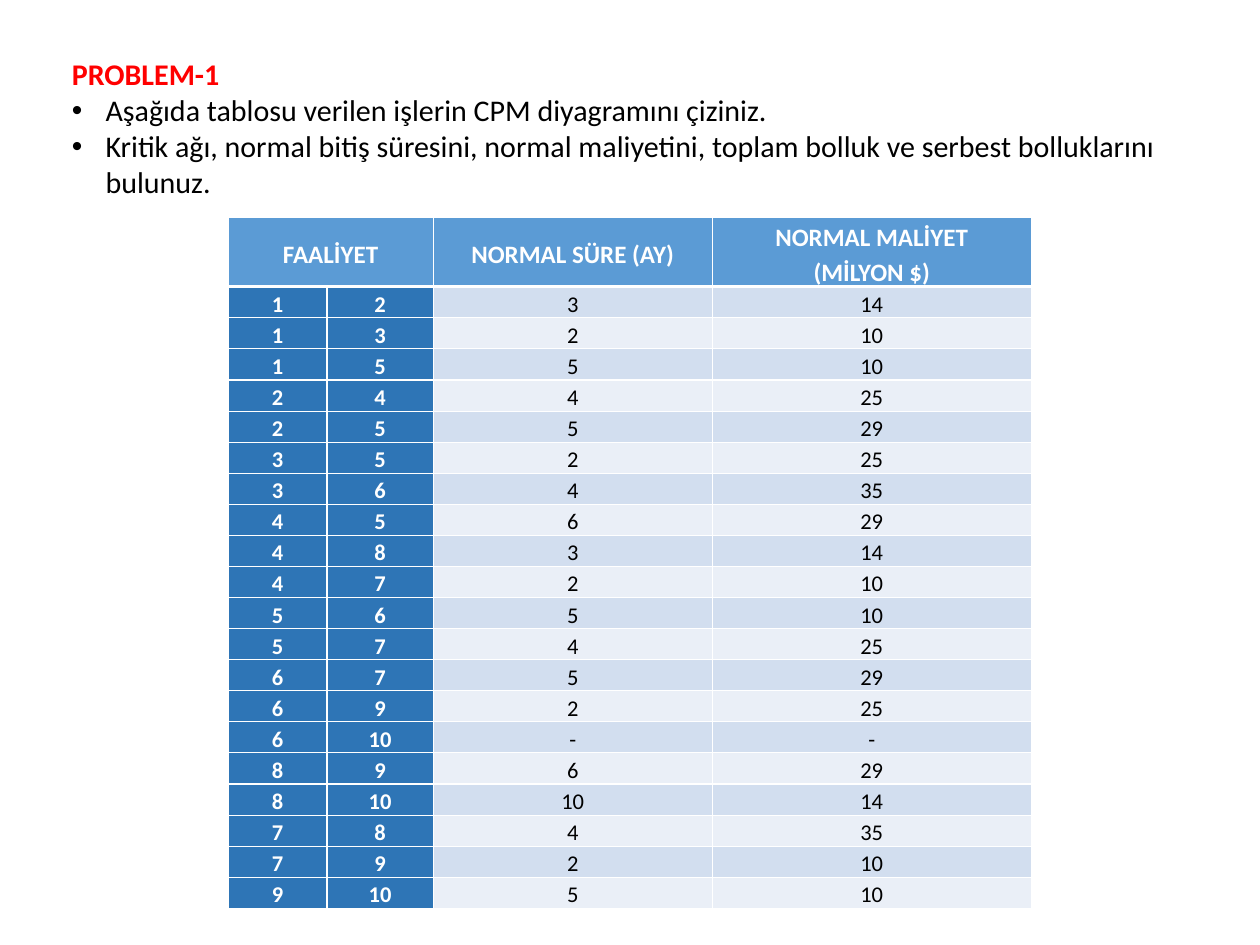
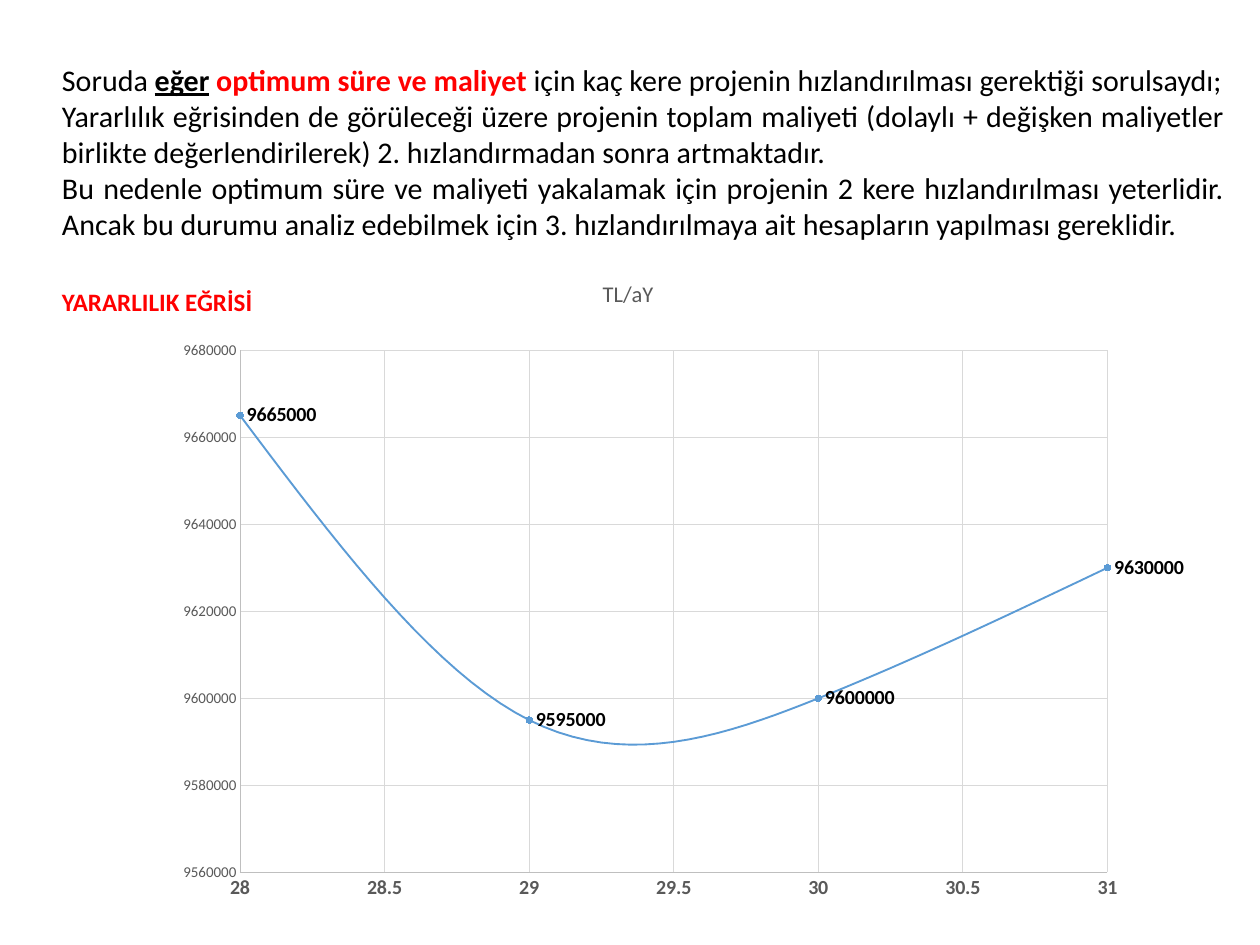
from pptx import Presentation
from pptx import util as u
from pptx.chart import data
from pptx.dml.color import RGBColor
from pptx.enum import chart as ch
from pptx.enum import text
from pptx.oxml import parse_xml
from pptx.oxml.ns import nsdecls, qn

Pt = u.Pt

WHITE = RGBColor(0xFF, 0xFF, 0xFF)
BLACK = RGBColor(0x00, 0x00, 0x00)
RED = RGBColor(0xFF, 0x00, 0x00)
BLUE = RGBColor(0x5B, 0x9B, 0xD5)
DARK_BLUE = RGBColor(0x2E, 0x75, 0xB6)
BAND = RGBColor(0xD2, 0xDE, 0xEF)
LIGHT_BAND = RGBColor(0xEA, 0xEF, 0xF7)
GREY = RGBColor(0x59, 0x59, 0x59)
AXIS_GREY = RGBColor(0xBF, 0xBF, 0xBF)
GRID_GREY = RGBColor(0xD9, 0xD9, 0xD9)

# from event, to event, duration (months), cost (millions)
ACTIVITIES = [
    (1, 2, 3, 14), (1, 3, 2, 10), (1, 5, 5, 10), (2, 4, 4, 25),
    (2, 5, 5, 29), (3, 5, 2, 25), (3, 6, 4, 35), (4, 5, 6, 29),
    (4, 8, 3, 14), (4, 7, 2, 10), (5, 6, 5, 10), (5, 7, 4, 25),
    (6, 7, 5, 29), (6, 9, 2, 25), (6, 10, "-", "-"), (8, 9, 6, 29),
    (8, 10, 10, 14), (7, 8, 4, 35), (7, 9, 2, 10), (9, 10, 5, 10),
]
HEADINGS = ["FAALİYET", "", "NORMAL SÜRE (AY)", "NORMAL MALİYET\v(MİLYON $)"]
COSTS = [(31, 9630000), (30, 9600000), (29, 9595000), (28, 9665000)]


class Deck:
    FONT = "Calibri"

    def __init__(self, width, height):
        self.prs = Presentation()
        self.prs.slide_width, self.prs.slide_height = Pt(width), Pt(height)
        self.s = None

    def new_slide(self):
        self.s = self.prs.slides.add_slide(self.prs.slide_layouts[6])

    def style(self, font, size, color=BLACK, bold=False, underline=None):
        font.name, font.size, font.bold = self.FONT, Pt(size), bold
        font.color.rgb = color
        if underline:
            font.underline = True

    def bullet(self, p):
        pPr = p._p.get_or_add_pPr()
        pPr.set("marL", str(Pt(27)))
        pPr.set("indent", str(-Pt(27)))
        pPr.append(parse_xml(f'<a:buFont {nsdecls("a")} typeface="Arial"/>'))
        pPr.append(parse_xml(f'<a:buChar {nsdecls("a")} char="•"/>'))

    def text_box(self, box, paragraphs, size=24, bullets=(), middle=False, wrap=True):
        """Each paragraph is a list of runs: (text, color, bold, underline)."""
        tf = self.s.shapes.add_textbox(*map(Pt, box)).text_frame
        tf.word_wrap = wrap
        tf.auto_size = text.MSO_AUTO_SIZE.SHAPE_TO_FIT_TEXT
        if middle:
            tf.vertical_anchor = text.MSO_ANCHOR.MIDDLE
        for i, runs in enumerate(paragraphs):
            p = tf.add_paragraph() if i else tf.paragraphs[0]
            if i in bullets:
                self.bullet(p)
            else:
                p.alignment = text.PP_ALIGN.JUSTIFY
            for words, *look in runs:
                r = p.add_run()
                r.text = words
                self.style(r.font, size, *look)

    def cell(self, cell, words, size, color, fill, bold, anchor, bottom=1):
        tcPr = cell._tc.get_or_add_tcPr()
        for side, width in zip("LRTB", (1, 1, 1, bottom)):
            tcPr.append(parse_xml(
                f'<a:ln{side} {nsdecls("a")} w="{Pt(width)}"><a:solidFill>'
                f'<a:srgbClr val="{WHITE}"/></a:solidFill></a:ln{side}>'))
        cell.fill.solid()
        cell.fill.fore_color.rgb = fill
        cell.margin_left = cell.margin_right = Pt(3.6)
        cell.margin_top = cell.margin_bottom = 0
        cell.vertical_anchor = anchor
        cell.text = words
        p = cell.text_frame.paragraphs[0]
        p.alignment = text.PP_ALIGN.CENTER
        p.line_spacing = 1.15
        for r in p.runs:
            self.style(r.font, size, color, bold)

    def activity_table(self, box, widths, header_height, row_height):
        table = self.s.shapes.add_table(
            len(ACTIVITIES) + 1, len(widths), *map(Pt, box)).table
        for column, width in zip(table.columns, widths):
            column.width = Pt(width)
        for i, row in enumerate(table.rows):
            row.height = Pt(row_height if i else header_height)
        for c, heading in enumerate(HEADINGS):
            self.cell(table.cell(0, c), heading, 20, WHITE, BLUE, True,
                      text.MSO_ANCHOR.MIDDLE, bottom=3)
        table.cell(0, 0).merge(table.cell(0, 1))
        for i, values in enumerate(ACTIVITIES, 1):
            band = BAND if i % 2 else LIGHT_BAND
            for c, value in enumerate(values):
                event = c < 2
                self.cell(table.cell(i, c), str(value), 18,
                          WHITE if event else BLACK,
                          DARK_BLUE if event else band,
                          event, text.MSO_ANCHOR.BOTTOM)

    def line(self, line, color, width):
        line.color.rgb = color
        line.width = Pt(width)

    def axis(self, axis, low, high, step, size, bold=False):
        axis.minimum_scale, axis.maximum_scale, axis.major_unit = low, high, step
        axis.major_tick_mark = axis.minor_tick_mark = ch.XL_TICK_MARK.NONE
        axis.has_major_gridlines = True
        self.line(axis.major_gridlines.format.line, GRID_GREY, 0.75)
        self.line(axis.format.line, AXIS_GREY, 0.75)
        self.style(axis.tick_labels.font, size, GREY, bold)
        axis.tick_labels.number_format = "General"
        axis.tick_labels.number_format_is_linked = False

    def place(self, element, index, target="", **fractions):
        """Fix a chart part at fractions of the chart's size."""
        for old in element.findall(qn("c:layout")):
            element.remove(old)
        modes = "".join(f'<c:{k}Mode val="edge"/>' for k in "xy")
        sizes = "".join(f'<c:{k} val="{v}"/>' for k, v in fractions.items())
        element.insert(index, parse_xml(
            f'<c:layout {nsdecls("c")}><c:manualLayout>{target}{modes}{sizes}'
            '</c:manualLayout></c:layout>'))

    def cost_curve(self, box, title):
        cd = data.XyChartData()
        points = cd.add_series("Series 1")
        for month, cost in COSTS:
            points.add_data_point(month, cost)
        chart = self.s.shapes.add_chart(
            ch.XL_CHART_TYPE.XY_SCATTER_SMOOTH, *map(Pt, box), cd).chart
        self.style(chart.font, 10)
        chart.has_legend = False
        chart.has_title = True
        tf = chart.chart_title.text_frame
        tf.text = title
        self.style(tf.paragraphs[0].runs[0].font, 18, GREY)
        self.place(chart.chart_title._element, 1, x=0.46, y=0.04)
        self.place(chart._chartSpace.chart.plotArea, 0,
                   '<c:layoutTarget val="inner"/>', x=0.13, y=0.153, w=0.803, h=0.772)
        self.place(chart._chartSpace.chart.plotArea, 0,
                   '<c:layoutTarget val="inner"/>', x=0.128, y=0.153, w=0.803, h=0.772)
        self.axis(chart.category_axis, 28, 31, 0.5, 16, True)
        self.axis(chart.value_axis, 9560000, 9680000, 20000, 12)

        plot = chart.plots[0]
        plot.vary_by_categories = False
        series = plot.series[0]
        series._element.get_or_add_smooth().val = True
        self.line(series.format.line, BLUE, 1.5)
        marker = series.marker
        marker.style, marker.size = ch.XL_MARKER_STYLE.CIRCLE, 5
        marker.format.fill.solid()
        marker.format.fill.fore_color.rgb = BLUE
        self.line(marker.format.line, BLUE, 0.75)
        for i in range(len(COSTS)):
            label = series.points[i].data_label
            self.style(label.font, 16, BLACK, True)
            label.position = ch.XL_LABEL_POSITION.RIGHT


def problem_slide(deck):
    deck.new_slide()
    deck.text_box((50.4, 41, 928.8, 152.6), [
        [("PROBLEM-1", RED, True)],
        [("Aşağıda tablosu verilen işlerin CPM diyagramını çiziniz.",)],
        [("Kritik ağı, normal bitiş süresini, normal maliyetini, toplam bolluk "
          "ve serbest bolluklarını bulunuz.",)],
    ], bullets=(1, 2))
    deck.activity_table((182.4, 174.2, 642.6, 552), (79.2, 85, 223.2, 255.2), 55.2, 24.84)


def optimum_slide(deck):
    deck.new_slide()
    deck.cost_curve((81.4, 197.3, 866.2, 541.4), "TL/aY")
    deck.text_box((42.5, 44.6, 943.9, 152.6), [
        [("Soruda ",), ("eğer", BLACK, True, True), (" ",),
         ("optimum süre ve maliyet ", RED, True),
         ("için kaç kere projenin hızlandırılması gerektiği sorulsaydı;",)],
        [("Yararlılık eğrisinden de görüleceği üzere projenin toplam maliyeti "
          "(dolaylı + değişken maliyetler birlikte değerlendirilerek) "
          "2. hızlandırmadan sonra artmaktadır.",)],
        [("Bu nedenle optimum süre ve maliyeti yakalamak için projenin 2 kere "
          "hızlandırılması yeterlidir. Ancak bu durumu analiz edebilmek için "
          "3. hızlandırılmaya ait hesapların yapılması gereklidir.",)],
    ], middle=True)
    deck.text_box((42.5, 226, 168.5, 31.7), [[("YARARLILIK EĞRİSİ", RED, True)]],
                  size=20, wrap=False)


def main():
    deck = Deck(1008, 756)
    problem_slide(deck)
    optimum_slide(deck)
    deck.prs.save("out.pptx")


if __name__ == "__main__":
    main()
